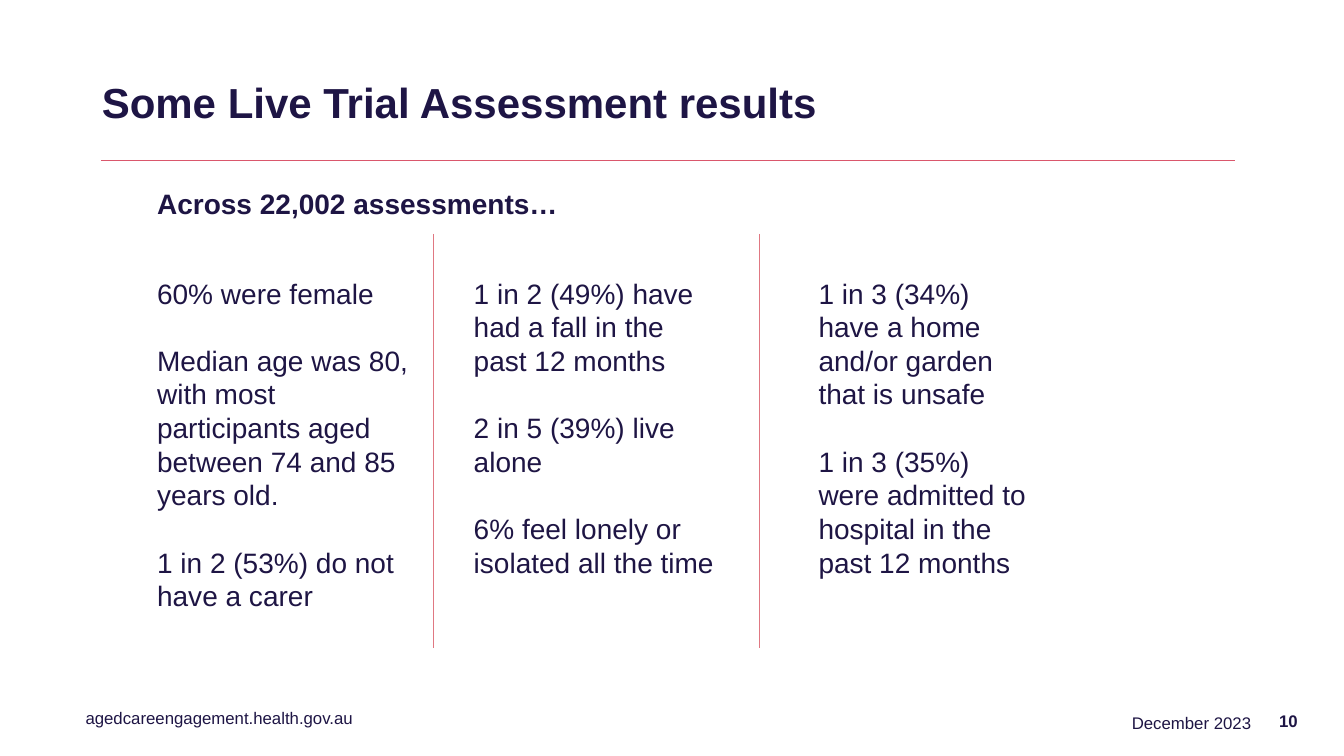
import pptx
import pptx.util
import pptx.dml.color
import pptx.enum.shapes
import pptx.enum.text
from lxml import etree

Inch = pptx.util.Inches
Pt = pptx.util.Pt
RGB = pptx.dml.color.RGBColor
ALIGN = pptx.enum.text.PP_ALIGN
ANCHOR = pptx.enum.text.MSO_ANCHOR

TITLE = "Some Live Trial Assessment results"
LEAD = "Across 22,002 assessments…"
# left, width, findings
COLUMNS = [
    (1.46, 2.83, [
        "60% were female",
        "Median age was 80, with most participants aged between 74 and 85 years old.",
        "1 in 2 (53%) do not have a carer",
    ]),
    (4.6, 2.62, [
        "1 in 2 (49%) have had a fall in the past 12 months",
        "2 in 5 (39%) live alone",
        "6% feel lonely or isolated all the time",
    ]),
    (8.02, 2.33, [
        "1 in 3 (34%) have a home and/or garden that is unsafe",
        "1 in 3 (35%) were admitted to hospital in the past 12 months",
    ]),
]
SITE = "agedcareengagement.health.gov.au"
DATE = "December 2023"
PAGE = "10"

COLORS = {"title": "1E1545", "body": "1E1544", "rule": "DA576C", "split": "E07882"}
FONT = "Arial"
WIDE, HIGH = 13.33, 7.5
COL_TOP, COL_HIGH = 2.69, 3.47
SPLITS = (4.3, 7.53)
SPLIT_TOP, SPLIT_END = 2.32, 6.43


def write(shape, lines, size=20, color="body", bold=False, align=ALIGN.LEFT,
          anchor=ANCHOR.TOP, gap=0, spacing=None):
    frame = shape.text_frame
    frame.word_wrap = True
    frame.auto_size = pptx.enum.text.MSO_AUTO_SIZE.NONE
    frame.vertical_anchor = anchor
    for i, line in enumerate(lines):
        para = frame.paragraphs[0] if i == 0 else frame.add_paragraph()
        para.alignment = align
        para.space_before = Pt(gap if i else 0)
        if spacing:
            para.line_spacing = spacing
        run = para.add_run()
        run.text = line
        run.font.name = FONT
        run.font.size = Pt(size)
        run.font.bold = bold
        run.font.color.rgb = RGB.from_string(COLORS[color])


def place(shape, *box):
    shape.left, shape.top, shape.width, shape.height = map(Inch, box)
    return shape


def rule(slide, x1, y1, x2, y2, color, width):
    line = slide.shapes.add_connector(
        pptx.enum.shapes.MSO_CONNECTOR.STRAIGHT, *map(Inch, (x1, y1, x2, y2)))
    line.line.color.rgb = RGB.from_string(COLORS[color])
    line.line.width = Pt(width)
    props = line.element.spPr
    etree.SubElement(props, pptx.oxml.ns.qn("a:effectLst"))


def main():
    deck = pptx.Presentation()
    deck.slide_width, deck.slide_height = Inch(WIDE), Inch(HIGH)
    slide = deck.slides.add_slide(deck.slide_layouts[5])

    def label(box, lines, **form):
        write(slide.shapes.add_textbox(*map(Inch, box)), lines, **form)

    rule(slide, 1, 1.59, 12.25, 1.59, "rule", 1)
    write(place(slide.shapes.title, 0.91, 0.74, 8.14, 0.6), [TITLE], size=30,
          color="title", bold=True, anchor=ANCHOR.MIDDLE, spacing=0.9)
    label((1.46, 1.8, 8.54, 0.44), [LEAD], bold=True)
    for left, width, lines in COLUMNS:
        label((left, COL_TOP, width, COL_HIGH), lines, gap=24)
    for x in SPLITS:
        rule(slide, x, SPLIT_TOP, x, SPLIT_END, "split", 0.5)

    label((0.75, 6.97, 2.86, 0.3), [SITE], size=12, color="title")
    label((9.51, 7.02, 3, 0.3), [DATE], size=12, align=ALIGN.RIGHT)
    label((12.52, 6.95, 0.45, 0.4), [PAGE], size=12, color="title", bold=True,
          align=ALIGN.RIGHT, anchor=ANCHOR.MIDDLE)
    deck.save("out.pptx")


if __name__ == "__main__":
    main()
